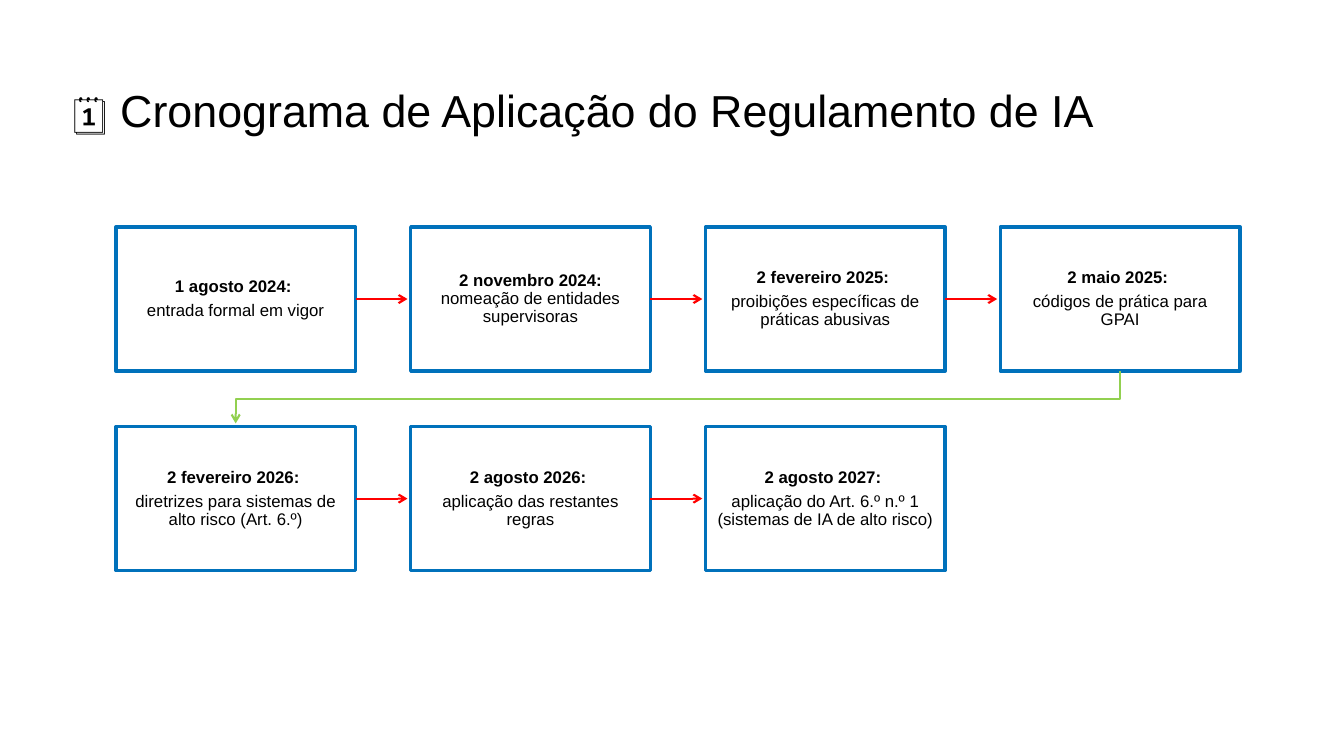
from pptx import Presentation
from pptx.dml.color import RGBColor
from pptx.enum.shapes import MSO_CONNECTOR, MSO_SHAPE
from pptx.enum.text import MSO_ANCHOR, PP_ALIGN
from pptx.oxml.ns import qn
from pptx.util import Cm, Pt
from lxml.etree import SubElement

# Content: title spans, then rows of paragraphs made of (date, event) spans
TITLE = [("🗓️ ", "icon"), ("Cronograma de Aplicação do Regulamento de IA", "title")]
MILESTONES = [
    [
        [["1 agosto 2024: "], ["entrada formal em vigor"]],
        [["2 novembro 2024: ", "nomeação de entidades supervisoras"]],
        [["2 fevereiro 2025: "], ["proibições específicas de práticas abusivas"]],
        [["2 maio 2025: "], ["códigos de prática para GPAI"]],
    ],
    [
        [["2 fevereiro 2026: "], ["diretrizes para sistemas de alto risco (Art. 6.º)"]],
        [["2 agosto 2026: "], ["aplicação das restantes regras"]],
        [["2 agosto 2027: "], ["aplicação do Art. 6.º n.º 1 (sistemas de IA de alto risco)"]],
    ],
]

THEME = {
    "font": "Arial",
    "text": RGBColor(0x00, 0x00, 0x00),
    "border": RGBColor(0x00, 0x71, 0xBB),
    "step": RGBColor(0xFF, 0x00, 0x00),
    "turn": RGBColor(0x92, 0xD0, 0x50),
    "sizes": {"icon": Pt(28), "title": Pt(32), "body": Pt(12)},
    "border_width": Pt(2.5),
    "arrow_width": Pt(1.5),
}

# Grid
LEFT, TOP = Cm(2.92), Cm(5.72)
BOX_WIDTH, BOX_HEIGHT = Cm(6.04), Cm(3.63)
GAP_X, GAP_Y = Cm(1.39), Cm(1.4)
ARROW_CLEARANCE = Cm(0.08)


def apply(target, values):
    for name, value in values.items():
        setattr(target, name, value)


def add_span(para, text, size, bold=False):
    span = para.add_run()
    span.text = text
    apply(span.font, {"name": THEME["font"], "size": THEME["sizes"][size], "bold": bold})
    span.font.color.rgb = THEME["text"]


def add_title(page):
    box = page.shapes.add_textbox(Cm(1.52), Cm(1.02), Cm(27.18), Cm(3.68))
    apply(box.text_frame, {"word_wrap": True, "vertical_anchor": MSO_ANCHOR.MIDDLE})
    para = box.text_frame.paragraphs[0]
    para.line_spacing = 0.9
    for text, size in TITLE:
        add_span(para, text, size)


def add_milestone(page, row, column, paragraphs):
    left = LEFT + column * (BOX_WIDTH + GAP_X)
    top = TOP + row * (BOX_HEIGHT + GAP_Y)
    box = page.shapes.add_shape(MSO_SHAPE.RECTANGLE, left, top, BOX_WIDTH, BOX_HEIGHT)
    box.shadow.inherit = False
    box.fill.background()
    box.line.color.rgb = THEME["border"]
    box.line.width = THEME["border_width"]

    frame = box.text_frame
    apply(frame, {"word_wrap": True, "vertical_anchor": MSO_ANCHOR.MIDDLE})
    apply(frame, {f"margin_{side}": Cm(0.3) for side in ("left", "top", "right", "bottom")})
    is_date = True
    for index, spans in enumerate(paragraphs):
        para = frame.add_paragraph() if index else frame.paragraphs[0]
        apply(para, {"alignment": PP_ALIGN.CENTER, "line_spacing": 0.9, "space_after": Pt(4.2)})
        for text in spans:
            add_span(para, text, "body", bold=is_date)
            is_date = False
    return box


def style_arrow(line, color):
    line.color.rgb = color
    line.width = THEME["arrow_width"]
    SubElement(line._get_or_add_ln(), qn("a:tailEnd"), type="arrow")


def add_step_arrow(page, box, following):
    middle = box.top + box.height // 2
    arrow = page.shapes.add_connector(
        MSO_CONNECTOR.STRAIGHT,
        box.left + box.width, middle, following.left - ARROW_CLEARANCE, middle)
    arrow.begin_connect(box, 3)
    style_arrow(arrow.line, THEME["step"])
    SubElement(arrow._element.spPr, qn("a:effectLst"))


def add_turn_arrow(page, last, first):
    start_x = last.left + last.width // 2
    end_x = first.left + first.width // 2
    start_y = last.top + last.height
    turn_y = (start_y + first.top) // 2
    builder = page.shapes.build_freeform(start_x, start_y)
    builder.add_line_segments(
        [(start_x, turn_y), (end_x, turn_y), (end_x, first.top - ARROW_CLEARANCE)], close=False)
    arrow = builder.convert_to_shape()
    arrow.shadow.inherit = False
    arrow.fill.background()
    style_arrow(arrow.line, THEME["turn"])


def main():
    deck = Presentation()
    apply(deck, {"slide_width": Cm(33.87), "slide_height": Cm(19.05)})
    page = deck.slides.add_slide(deck.slide_layouts[6])
    add_title(page)

    # Milestone boxes
    rows = [
        [add_milestone(page, row, column, paragraphs) for column, paragraphs in enumerate(items)]
        for row, items in enumerate(MILESTONES)
    ]

    # Arrows along each row, then from one row to the next
    for boxes in rows:
        for box, following in zip(boxes, boxes[1:]):
            add_step_arrow(page, box, following)
    for upper, lower in zip(rows, rows[1:]):
        add_turn_arrow(page, upper[-1], lower[0])

    deck.save("out.pptx")


if __name__ == "__main__":
    main()
